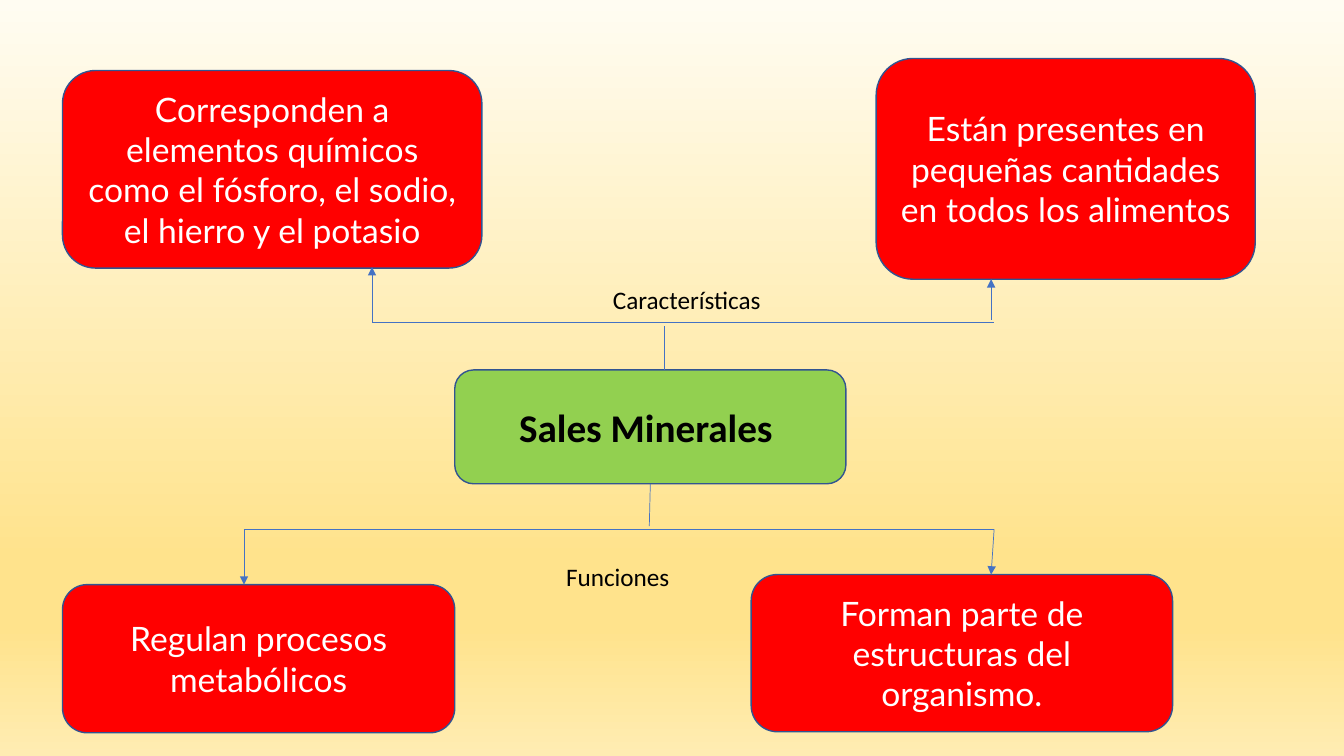
from dataclasses import dataclass

from lxml import etree
from pptx import Presentation
from pptx import util as u
from pptx.dml.color import RGBColor
from pptx.enum import shapes, text
from pptx.oxml import parse_xml
from pptx.oxml.ns import nsdecls, qn


@dataclass(frozen=True)
class Theme:
    """Colours, fonts and type sizes of the concept map."""
    topic_fill: str = "92D050"
    idea_fill: str = "FF0000"
    outline: str = "325491"
    link: str = "4472C4"
    dark: str = "000000"
    light: str = "FFFFFF"
    topic_font: str = "Calibri"
    idea_font: str = "Lato"
    topic_size: int = 28
    idea_size: int = 24
    label_size: int = 18
    backdrop: tuple = ((0, "FFFCF2"), (74, "FFE38C"), (83, "FFE38C"), (100, "FFECB2"))


THEME = Theme()


def paint_background(page):
    """Fill the page with the vertical gradient of the theme."""
    stops = "".join(
        f'<a:gs pos="{place * 1000}"><a:srgbClr val="{colour}"/></a:gs>'
        for place, colour in THEME.backdrop)
    gradient = parse_xml(
        f'<a:gradFill {nsdecls("a")} rotWithShape="1"><a:gsLst>{stops}</a:gsLst>'
        '<a:lin ang="5400000" scaled="0"/></a:gradFill>')
    fill = page.background.fill
    fill.solid()
    solid = page.element.find(".//" + qn("p:bgPr")).find(qn("a:solidFill"))
    solid.getparent().replace(solid, gradient)


def write(box, words, font, size, colour, bold=False):
    """Write one centred run in a box."""
    box.text_frame.word_wrap = True
    para = box.text_frame.paragraphs[0]
    para.alignment = text.PP_ALIGN.CENTER
    span = para.add_run()
    span.text = words
    span.font.name = font
    span.font.size = u.Pt(size)
    span.font.bold = bold
    span.font.color.rgb = RGBColor.from_string(colour)


def add_node(page, area, fill):
    """Add an empty rounded box in the given area."""
    box = page.shapes.add_shape(
        shapes.MSO_SHAPE.ROUNDED_RECTANGLE, *map(u.Inches, area))
    box.shadow.inherit = False
    box.fill.solid()
    box.fill.fore_color.rgb = RGBColor.from_string(fill)
    box.line.color.rgb = RGBColor.from_string(THEME.outline)
    box.line.width = u.Pt(1)
    box.text_frame.vertical_anchor = text.MSO_ANCHOR.MIDDLE
    return box


def add_topic(page, area, words):
    """Add the central topic of the map."""
    box = add_node(page, area, THEME.topic_fill)
    write(box, words, THEME.topic_font, THEME.topic_size, THEME.dark, bold=True)
    return box


def add_idea(page, area, words):
    """Add one idea box."""
    box = add_node(page, area, THEME.idea_fill)
    write(box, words, THEME.idea_font, THEME.idea_size, THEME.light)


def add_label(page, area, words):
    """Add the label that names a branch."""
    box = page.shapes.add_textbox(*map(u.Inches, area))
    write(box, words, THEME.topic_font, THEME.label_size, THEME.dark)


def add_link(page, start, end, arrow=False):
    """Add a thin straight line, with an arrowhead at its end if asked."""
    link = page.shapes.add_connector(
        shapes.MSO_CONNECTOR.STRAIGHT, *map(u.Inches, (*start, *end)))
    link.line.color.rgb = RGBColor.from_string(THEME.link)
    link.line.width = u.Pt(0.5)
    if arrow:
        etree.SubElement(link.line._get_or_add_ln(), qn("a:tailEnd"), type="triangle")
    etree.SubElement(link._element.spPr, qn("a:effectLst"))
    return link


def add_branch(page, rail, trunk, arrows, label, ideas):
    """Add a branch: its ideas, rail, trunk, arrows and label."""
    for area, words in ideas:
        add_idea(page, area, words)
    left, right, level = rail
    add_link(page, (left, level), (right, level))
    for start, end in arrows:
        add_link(page, start, end, arrow=True)
    add_label(page, *label)
    return add_link(page, *trunk)


def add_features(page):
    """Add the upper branch, with the features of mineral salts."""
    add_branch(
        page,
        rail=(3.69, 9.86, 3.2),
        trunk=((6.59, 3.67), (6.59, 3.23)),
        arrows=[((3.69, 3.2), (3.69, 2.65)), ((9.83, 3.17), (9.83, 2.77))],
        label=((5.7, 2.77, 2.28, 0.4), "Características "),
        ideas=[
            ((0.62, 0.7, 4.16, 1.96),
             "Corresponden a elementos químicos como el fósforo, "
             "el sodio, el hierro y el potasio"),
            ((8.69, 0.58, 3.76, 2.19),
             "Están presentes en pequeñas cantidades en todos los alimentos"),
        ])


def add_functions(page, topic):
    """Add the lower branch, with the functions, joined to the topic."""
    trunk = add_branch(
        page,
        rail=(2.42, 9.86, 5.25),
        trunk=((6.45, 4.8), (6.44, 5.22)),
        arrows=[((2.42, 5.25), (2.42, 5.8)), ((9.86, 5.25), (9.83, 5.7))],
        label=((5, 5.52, 2.31, 0.4), "Funciones "),
        ideas=[
            ((0.62, 5.8, 3.89, 1.47), "Regulan procesos metabólicos"),
            ((7.45, 5.7, 4.18, 1.56), "Forman parte de estructuras del organismo."),
        ])
    trunk.begin_connect(topic, 2)


def main():
    """Build the deck and save it."""
    deck = Presentation()
    deck.slide_width, deck.slide_height = u.Inches(13.33), u.Inches(7.5)
    page = deck.slides.add_slide(deck.slide_layouts[6])
    paint_background(page)
    topic = add_topic(page, (4.51, 3.67, 3.88, 1.13), "Sales Minerales ")
    add_features(page)
    add_functions(page, topic)
    deck.save("out.pptx")


if __name__ == "__main__":
    main()
